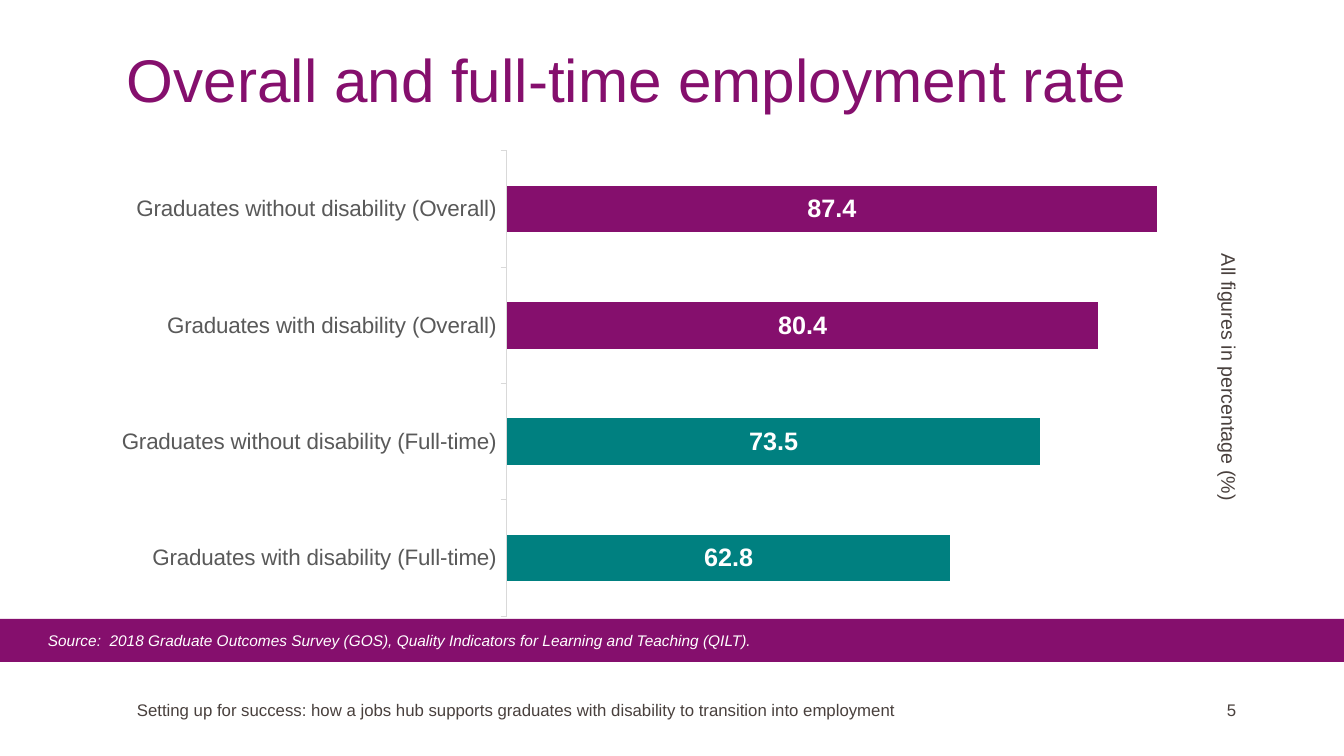
from lxml import etree
from pptx import Presentation
from pptx.chart.data import CategoryChartData
from pptx.dml.color import RGBColor
from pptx.enum.chart import XL_CHART_TYPE as ChartType
from pptx.enum.chart import XL_LABEL_POSITION as LabelPosition
from pptx.enum.chart import XL_TICK_MARK as TickMark
from pptx.enum.shapes import MSO_CONNECTOR as Connector
from pptx.enum.shapes import MSO_SHAPE as Shape
from pptx.enum.text import MSO_ANCHOR as Anchor
from pptx.oxml.ns import qn
from pptx.util import Emu, Pt

PX_PER_INCH = 100.8
WIDTH, HEIGHT = 1344, 756
PURPLE, TEAL, WHITE = "850F6D", "008080", "FFFFFF"
BROWN, GREY, PALE = "49403D", "595959", "D9D9D9"
RATES = [
    ("Graduates with disability (Full-time)", 62.8, TEAL),
    ("Graduates without disability (Full-time)", 73.5, TEAL),
    ("Graduates with disability (Overall)", 80.4, PURPLE),
    ("Graduates without disability (Overall)", 87.4, PURPLE),
]


def px(length):
    return Emu(round(length * 914400 / PX_PER_INCH))


def rgb(value):
    return RGBColor.from_string(value)


def set_font(font, size, color, bold=False, italic=False):
    font.name = "Arial"
    font.size = Pt(size)
    font.color.rgb = rgb(color)
    font.bold = bold
    font.italic = italic


def add_text(slide, box, text, size, color, anchor=Anchor.TOP, italic=False, wrap=True):
    label = slide.shapes.add_textbox(*map(px, box))
    frame = label.text_frame
    frame.word_wrap = wrap
    frame.vertical_anchor = anchor
    frame.text = text
    set_font(frame.paragraphs[0].font, size, color, italic=italic)
    return label


def add_title(slide, box):
    frame = add_text(slide, box, "Overall and full-time employment rate", 43, PURPLE).text_frame
    frame.margin_left = frame.margin_right = frame.margin_top = frame.margin_bottom = 0
    frame.paragraphs[0].line_spacing = Pt(45)


def add_rate_chart(slide, box):
    data = CategoryChartData()
    data.categories = [category for category, _, _ in RATES]
    data.add_series("Series 1", [rate for _, rate, _ in RATES])
    chart = slide.shapes.add_chart(ChartType.BAR_STACKED, *map(px, box), data).chart
    chart.has_legend = chart.has_title = False
    set_font(chart.font, 10, "000000")

    groups = chart.category_axis
    groups.major_tick_mark = TickMark.OUTSIDE
    groups.minor_tick_mark = TickMark.NONE
    groups.has_major_gridlines = False
    groups.format.line.color.rgb = rgb(PALE)
    groups.format.line.width = Pt(0.75)
    set_font(groups.tick_labels.font, 16, GREY)

    scale = chart.value_axis
    scale.minimum_scale, scale.maximum_scale = 10, 100
    scale.has_major_gridlines = False
    scale.visible = False

    plot = chart.plots[0]
    plot.gap_width, plot.overlap = 150, 100
    plot.vary_by_categories = False
    bars = plot.series[0]
    bars.invert_if_negative = False
    bars.format.fill.solid()
    bars.format.fill.fore_color.rgb = rgb(PURPLE)
    for index, (_, _, color) in enumerate(RATES):
        if color != PURPLE:
            fill = bars.points[index].format.fill
            fill.solid()
            fill.fore_color.rgb = rgb(color)
    labels = bars.data_labels
    labels.show_value = True
    labels.position = LabelPosition.CENTER
    set_font(labels.font, 18, WHITE, bold=True)


def add_source_band(slide, box):
    left, top, width, height = box
    band = slide.shapes.add_shape(Shape.RECTANGLE, *map(px, box))
    band.shadow.inherit = False
    band.fill.solid()
    band.fill.fore_color.rgb = rgb(PURPLE)
    band.line.fill.background()
    rule_y = top + height - 6
    rule = slide.shapes.add_connector(
        Connector.STRAIGHT, px(left), px(rule_y), px(left + width), px(rule_y))
    rule.line.color.rgb = rgb(PURPLE)
    rule.line.width = Pt(10)
    etree.SubElement(rule.element.spPr, qn("a:effectLst"))
    source = ("Source:  2018 Graduate Outcomes Survey (GOS), "
              "Quality Indicators for Learning and Teaching (QILT).")
    add_text(slide, (left + 38, top + 7, width - 77, 29), source, 11, WHITE, italic=True)


def add_footer(slide, box):
    left, top, width, height = box
    number_width = 86
    topic = ("Setting up for success: how a jobs hub supports graduates "
             "with disability to transition into employment")
    add_text(slide, (left, top, 856, height), topic, 12, BROWN, Anchor.MIDDLE)
    add_text(slide, (left + width - number_width, top, number_width, height),
             "5", 12, BROWN, Anchor.MIDDLE)


def add_unit_note(slide, box):
    note = add_text(slide, box, "All figures in percentage (%)", 14, BROWN, wrap=False)
    note.rotation = 90


def build_rate_slide(prs):
    slide = prs.slides.add_slide(prs.slide_layouts[6])
    add_title(slide, (127, 52, 1090, 81))
    add_rate_chart(slide, (98, 141, 1189, 485))
    add_source_band(slide, (0, 619, WIDTH, 42))
    add_footer(slide, (127, 663, 1176, 93))
    add_unit_note(slide, (1095, 361, 268, 34))


def main():
    prs = Presentation()
    prs.slide_width, prs.slide_height = px(WIDTH), px(HEIGHT)
    build_rate_slide(prs)
    prs.save("out.pptx")


if __name__ == "__main__":
    main()
